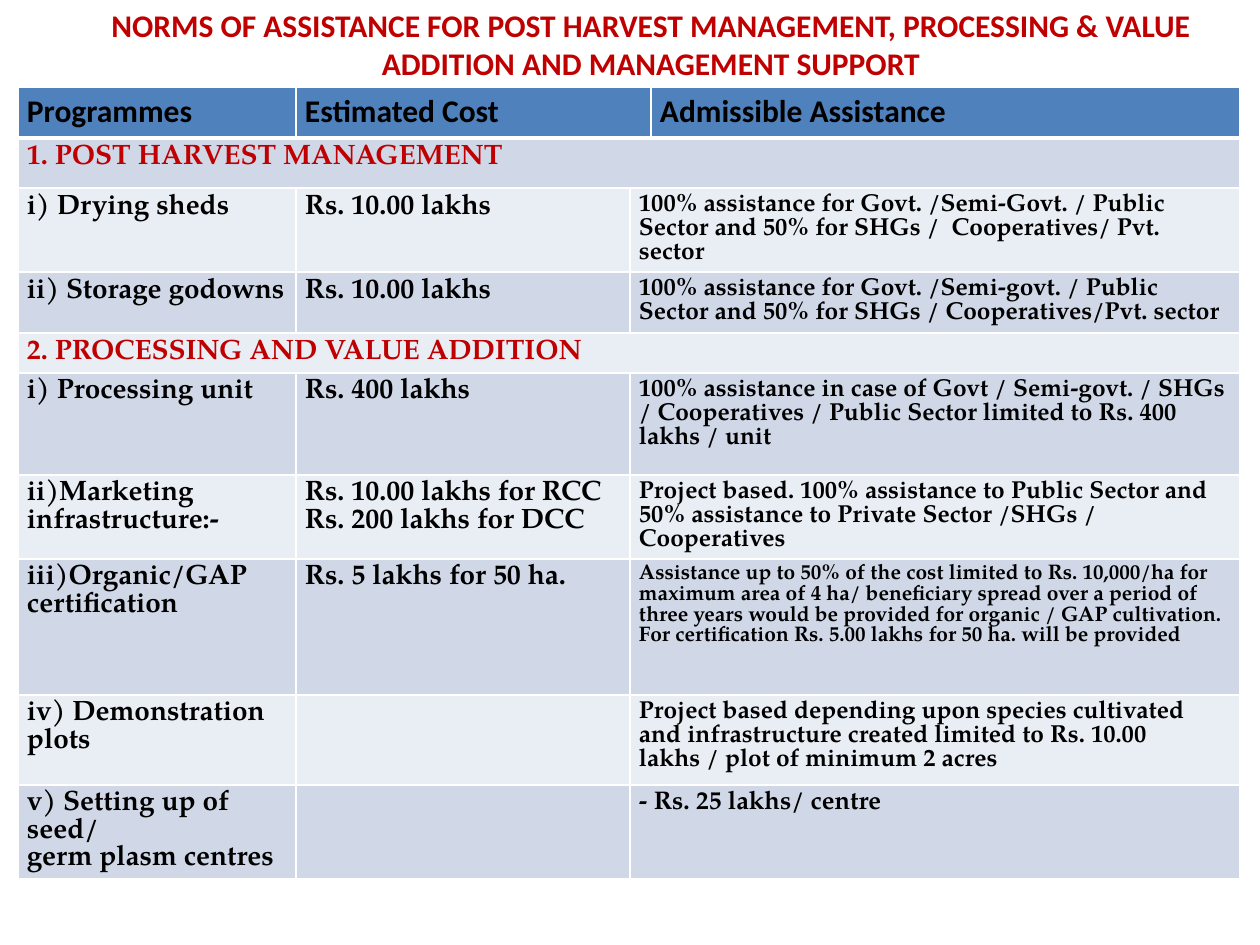
from dataclasses import dataclass

from lxml import etree
from pptx import Presentation
from pptx.dml.color import RGBColor
from pptx.enum.text import PP_ALIGN
from pptx.oxml.ns import qn
from pptx.util import Pt

CENTER = PP_ALIGN.CENTER
EMU_PER_PX = 914400 / 126

RED = RGBColor(0xC0, 0x00, 0x00)
BLACK = RGBColor(0x00, 0x00, 0x00)
WHITE = RGBColor(0xFF, 0xFF, 0xFF)
HEADER_BLUE = RGBColor(0x4F, 0x81, 0xBD)
BANDS = (RGBColor(0xE9, 0xED, 0xF4), RGBColor(0xD0, 0xD8, 0xE8))

SANS = "Calibri"
SERIF = "TeX Gyre Pagella"
COLUMN_WIDTHS = (278, 334, 21, 589)


@dataclass(frozen=True)
class Style:
    size: float
    name: str
    color: RGBColor


@dataclass(frozen=True)
class Row:
    height: int
    texts: tuple[str, ...]
    assistance_size: float = 14


TITLE = Style(18, SANS, RED)
HEADER = Style(18, SANS, BLACK)
SECTION = Style(16, SERIF, RED)
BODY = Style(16, SERIF, BLACK)

ROWS = (
    Row(51, ("Programmes", "Estimated Cost", "Admissible Assistance")),
    Row(50, ("1. POST HARVEST MANAGEMENT",)),
    Row(84, ("i) Drying sheds", "Rs. 10.00 lakhs",
             "100% assistance for Govt. /Semi-Govt. / Public Sector and 50% "
             "for SHGs /  Cooperatives/ Pvt. sector")),
    Row(61, ("ii) Storage godowns", "Rs. 10.00 lakhs",
             "100% assistance for Govt. /Semi-govt. / Public Sector and 50% "
             "for SHGs / Cooperatives/Pvt. sector")),
    Row(40, ("2. PROCESSING AND VALUE ADDITION",)),
    Row(102, ("i) Processing unit", "Rs. 400 lakhs",
              "100% assistance in case of Govt / Semi-govt. / SHGs / Cooperatives "
              "/ Public Sector limited to Rs. 400 lakhs / unit")),
    Row(84, ("ii)Marketing\ninfrastructure:-",
             "Rs. 10.00 lakhs for RCC\nRs. 200 lakhs for DCC",
             "Project based. 100% assistance to Public Sector and 50% assistance "
             "to Private Sector /SHGs / Cooperatives")),
    Row(136, ("iii)Organic/GAP\ncertification", "Rs. 5 lakhs for 50 ha.",
              "Assistance up to 50% of the cost limited to Rs. 10,000/ha for maximum "
              "area of 4 ha/ beneficiary spread over a period of three years would be "
              "provided for organic / GAP cultivation. For certification Rs. 5.00 "
              "lakhs for 50 ha. will be provided"), 12),
    Row(90, ("iv) Demonstration plots", "",
             "Project based depending upon species cultivated and infrastructure "
             "created limited to Rs. 10.00 lakhs / plot of minimum 2 acres")),
    Row(94, ("v) Setting up of seed/\ngerm plasm centres", "",
             "- Rs. 25 lakhs/ centre"), 14.5),
)


def px(length: int) -> int:
    return round(length * EMU_PER_PX)


def write(frame, text: str, style: Style) -> None:
    frame.text = text
    formats = {"size": Pt(style.size), "name": style.name, "bold": True}
    for para in frame.paragraphs:
        for font in (para.font, *(span.font for span in para.runs)):
            for attribute, value in formats.items():
                setattr(font, attribute, value)
            font.color.rgb = style.color


def paint(cell, fill: RGBColor, bottom: int) -> None:
    properties = cell._tc.get_or_add_tcPr()
    for side, width in (("L", 1), ("R", 1), ("T", 1), ("B", bottom)):
        line = etree.SubElement(properties, qn(f"a:ln{side}"), w=str(Pt(width)))
        solid = etree.SubElement(line, qn("a:solidFill"))
        etree.SubElement(solid, qn("a:srgbClr"), val=str(WHITE))
    cell.fill.solid()
    cell.fill.fore_color.rgb = fill
    margins = {"margin_left": px(9), "margin_right": px(9),
               "margin_top": px(6), "margin_bottom": px(6)}
    for attribute, value in margins.items():
        setattr(cell, attribute, value)


def row_layout(index: int, row: Row) -> tuple[tuple[int, int], ...]:
    if len(row.texts) == 1:
        return ((0, 3),)
    if index == 0:
        return ((0, 0), (1, 2), (3, 3))
    return ((0, 0), (1, 1), (2, 3))


def cell_style(index: int, position: int, row: Row) -> Style:
    if index == 0:
        return HEADER
    if len(row.texts) == 1:
        return SECTION
    if position == 2:
        return Style(row.assistance_size, SERIF, BLACK)
    return BODY


def add_title(page) -> None:
    box = page.shapes.add_textbox(px(42), 0, px(1218), px(89))
    box.text_frame.word_wrap = True
    write(box.text_frame,
          "NORMS OF ASSISTANCE FOR POST HARVEST MANAGEMENT, PROCESSING & VALUE "
          "ADDITION AND MANAGEMENT SUPPORT", TITLE)
    box.text_frame.paragraphs[0].alignment = CENTER


def add_norms_table(page) -> None:
    height = sum(row.height for row in ROWS)
    table = page.shapes.add_table(
        len(ROWS), len(COLUMN_WIDTHS), px(18), px(87),
        px(sum(COLUMN_WIDTHS)), px(height)).table
    for column, width in zip(table.columns, COLUMN_WIDTHS):
        column.width = px(width)
    for index, row in enumerate(ROWS):
        table.rows[index].height = px(row.height)
        fill = BANDS[index % 2] if index else HEADER_BLUE
        for cell in table.rows[index].cells:
            paint(cell, fill, 1 if index else 3)
        for position, (first, last) in enumerate(row_layout(index, row)):
            cell = table.cell(index, first)
            if last > first:
                cell.merge(table.cell(index, last))
            write(cell.text_frame, row.texts[position],
                  cell_style(index, position, row))


def main() -> None:
    deck = Presentation()
    deck.slide_width, deck.slide_height = px(1260), px(945)
    page = deck.slides.add_slide(deck.slide_layouts[6])
    add_norms_table(page)
    add_title(page)
    deck.save("out.pptx")


if __name__ == "__main__":
    main()
